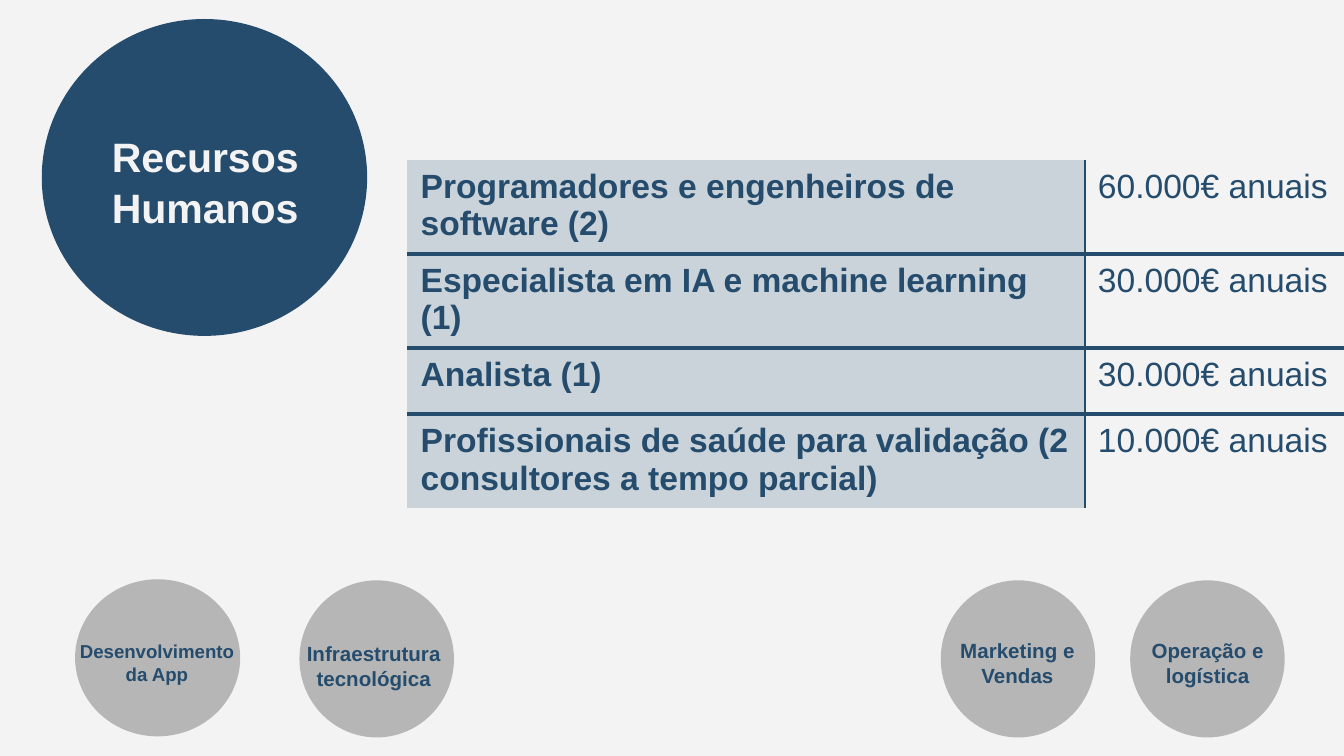
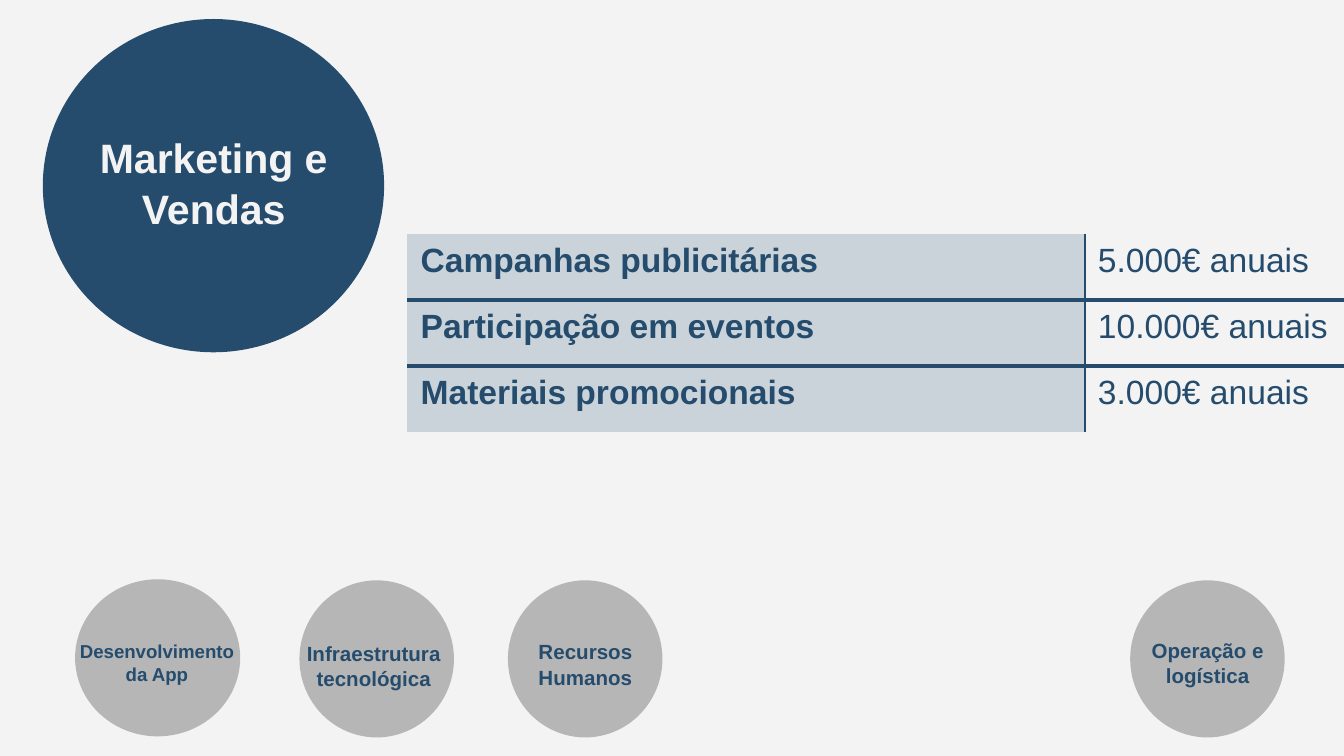
from dataclasses import dataclass

from lxml.etree import SubElement
from pptx import Presentation
from pptx.dml.color import RGBColor
from pptx.enum.shapes import MSO_SHAPE as Preset
from pptx.enum.text import MSO_ANCHOR as Anchor, MSO_AUTO_SIZE as AutoSize, PP_ALIGN as Align
from pptx.oxml.ns import qn
from pptx.util import Cm, Pt

COLORS = {"navy": "254C6D", "paper": "F3F3F3", "mist": "CAD3D9", "gray": "B6B6B6"}
FONT = "Arial"
TITLE_ONLY = 5
TABLE_LEFT = 7.7
COLUMN_WIDTHS = (12.8, 4.9)
LINE_HEIGHTS = {1: 1.25, 2: 1.78}


@dataclass(frozen=True)
class Box:
    left: float
    top: float
    width: float
    height: float

    def lengths(self) -> tuple:
        return Cm(self.left), Cm(self.top), Cm(self.width), Cm(self.height)


@dataclass(frozen=True)
class Stage:
    name: str
    circle: Box
    label: Box
    size: float = 11


@dataclass(frozen=True)
class Cost:
    item: str
    amount: str
    lines: int = 1


@dataclass(frozen=True)
class CostPage:
    title: str
    circle: Box
    label: Box
    table_top: float
    costs: tuple[Cost, ...]


def stage(name: str, circle_left: float, label: Box) -> Stage:
    return Stage(name, Box(circle_left, 10.97, 2.92, 2.97), label)


STAGES = (
    stage("Infraestrutura tecnológica", 5.66, Box(5.54, 11.96, 3.05, 1.19)),
    stage("Marketing e Vendas", 17.78, Box(17.58, 11.91, 3.3, 1.19)),
    stage("Operação e logística", 21.36, Box(21.21, 11.91, 3.23, 1.19)),
    Stage("Desenvolvimento da App", Box(1.42, 10.95, 3.12, 2.97), Box(1.24, 11.94, 3.45, 1.12), 10),
    stage("Recursos Humanos", 9.6, Box(9.68, 11.94, 2.77, 1.19)),
)

PAGES = (
    CostPage(
        "Recursos Humanos",
        Box(0.79, 0.36, 6.15, 5.99),
        Box(0.97, 2.31, 5.82, 2.13),
        3.02,
        (
            Cost("Programadores e engenheiros de software (2)", "60.000€ anuais", 2),
            Cost("Especialista em IA e machine learning (1)", "30.000€ anuais", 2),
            Cost("Analista (1)", "30.000€ anuais"),
            Cost("Profissionais de saúde para validação (2 consultores a tempo parcial)",
                 "10.000€ anuais", 2),
        ),
    ),
    CostPage(
        "Marketing e Vendas",
        Box(0.81, 0.36, 6.45, 6.3),
        Box(0.38, 2.34, 7.32, 2.13),
        4.42,
        (
            Cost("Campanhas publicitárias", "5.000€ anuais"),
            Cost("Participação em eventos", "10.000€ anuais"),
            Cost("Materiais promocionais", "3.000€ anuais"),
        ),
    ),
)


def rgb(color: str) -> RGBColor:
    return RGBColor.from_string(COLORS[color])


def style_paragraph(paragraph, size: float, color: str, bold: bool) -> None:
    paragraph.font.name = FONT
    paragraph.font.size = Pt(size)
    paragraph.font.bold = bold
    paragraph.font.color.rgb = rgb(color)


def write_label(shape, text: str, size: float, color: str) -> None:
    frame = shape.text_frame
    frame.text = text
    frame.word_wrap = True
    frame.auto_size = AutoSize.NONE
    frame.vertical_anchor = Anchor.TOP
    frame.margin_left = frame.margin_right = Cm(0.2)
    frame.margin_top = frame.margin_bottom = Cm(0.13)
    paragraph = frame.paragraphs[0]
    paragraph.alignment = Align.CENTER
    paragraph.line_spacing = 1.04
    style_paragraph(paragraph, size, color, True)


def add_circle(shapes, box: Box, color: str):
    circle = shapes.add_shape(Preset.OVAL, *box.lengths())
    circle.shadow.inherit = False
    circle.fill.solid()
    circle.fill.fore_color.rgb = rgb(color)
    circle.line.fill.background()
    return circle


def add_stage(slide, item: Stage) -> None:
    group = slide.shapes.add_group_shape()
    add_circle(group.shapes, item.circle, "gray")
    label = group.shapes.add_textbox(*item.label.lengths())
    write_label(label, item.name, item.size, "navy")


def add_title(slide, page: CostPage) -> None:
    circle = add_circle(slide.shapes, page.circle, "navy")
    title = slide.shapes.title
    title.left, title.top, title.width, title.height = page.label.lengths()
    write_label(title, page.title, 22, "paper")
    circle._element.addnext(title._element)


def set_borders(cell, widths: dict[str, float]) -> None:
    properties = cell._tc.get_or_add_tcPr()
    for side in ("L", "R", "T", "B"):
        width = widths.get(side, 0)
        line = SubElement(properties, qn(f"a:ln{side}"), w=str(Pt(width)))
        if width:
            fill = SubElement(line, qn("a:solidFill"))
            SubElement(fill, qn("a:srgbClr"), val=COLORS["navy"])
        else:
            SubElement(line, qn("a:noFill"))


def fill_cell(cell, text: str, bold: bool, color: str, borders: dict[str, float]) -> None:
    set_borders(cell, borders)
    cell.fill.solid()
    cell.fill.fore_color.rgb = rgb(color)
    cell.margin_left = cell.margin_right = Cm(0.25)
    cell.margin_top = cell.margin_bottom = Cm(0.15)
    cell.text = text
    style_paragraph(cell.text_frame.paragraphs[0], 18, "navy", bold)


def add_cost_table(slide, page: CostPage) -> None:
    heights = [LINE_HEIGHTS[cost.lines] for cost in page.costs]
    box = Box(TABLE_LEFT, page.table_top, sum(COLUMN_WIDTHS), sum(heights))
    table = slide.shapes.add_table(len(heights), len(COLUMN_WIDTHS), *box.lengths()).table
    table.first_row = table.horz_banding = False
    for column, width in zip(table.columns, COLUMN_WIDTHS):
        column.width = Cm(width)
    rules = [0, 2] + [2.25] * (len(heights) - 2) + [0]
    for index, (cost, height) in enumerate(zip(page.costs, heights)):
        table.rows[index].height = Cm(height)
        edges = {"T": rules[index], "B": rules[index + 1]}
        fill_cell(table.cell(index, 0), cost.item, True, "mist", {**edges, "R": 1})
        fill_cell(table.cell(index, 1), cost.amount, False, "paper", {**edges, "L": 1})


def add_page(presentation, page: CostPage) -> None:
    slide = presentation.slides.add_slide(presentation.slide_layouts[TITLE_ONLY])
    slide.background.fill.solid()
    slide.background.fill.fore_color.rgb = rgb("paper")
    add_cost_table(slide, page)
    add_title(slide, page)
    for item in STAGES:
        if item.name != page.title:
            add_stage(slide, item)


def main() -> None:
    presentation = Presentation()
    presentation.slide_width = Cm(25.4)
    presentation.slide_height = Cm(14.29)
    for page in PAGES:
        add_page(presentation, page)
    presentation.save("out.pptx")


if __name__ == "__main__":
    main()
